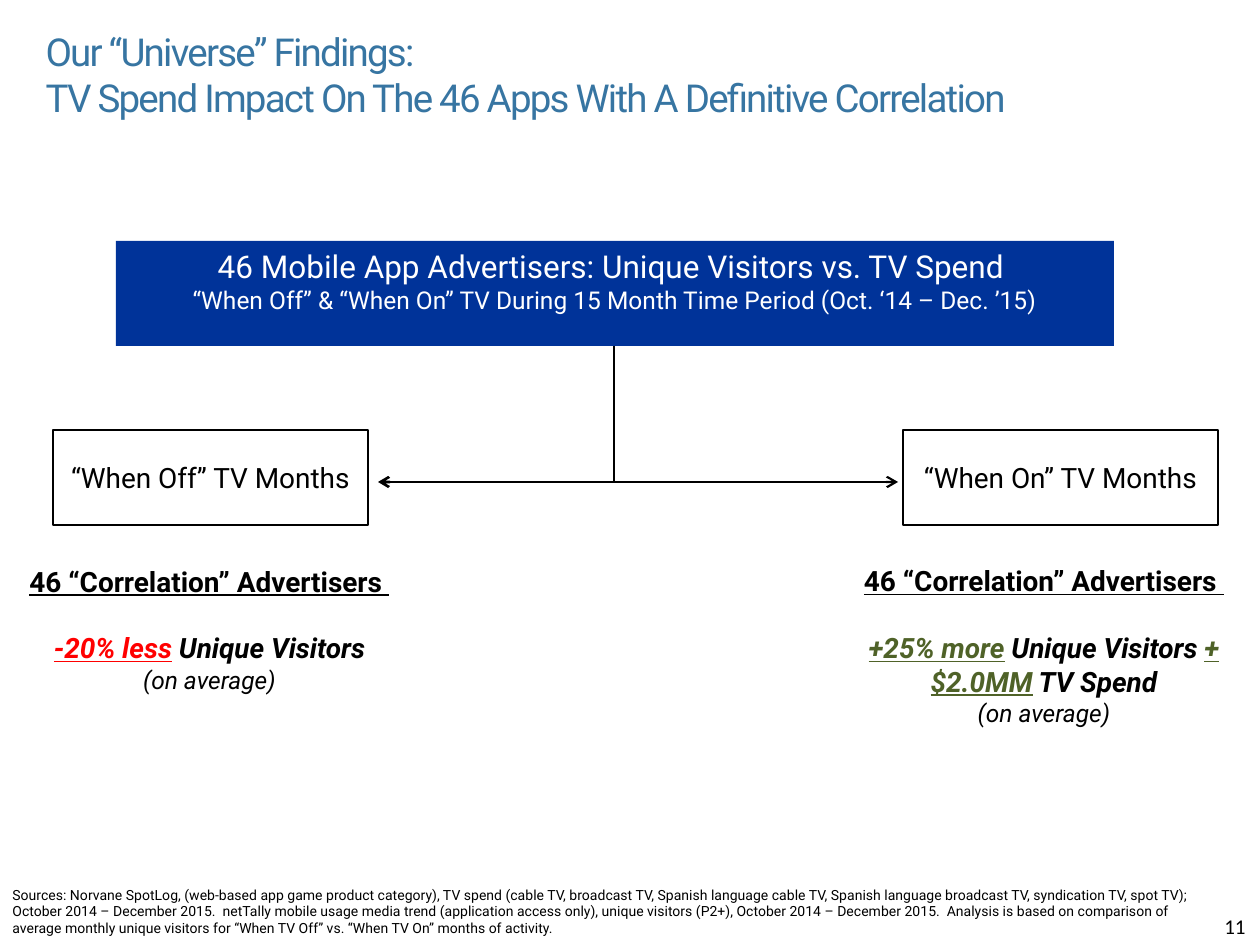
from dataclasses import dataclass

from lxml.etree import SubElement
from pptx import Presentation
from pptx.dml.color import RGBColor
from pptx.enum.shapes import MSO_CONNECTOR as Connector, MSO_SHAPE as Preset
from pptx.enum.text import MSO_ANCHOR as Anchor, MSO_AUTO_SIZE as AutoSize, PP_ALIGN as Align
from pptx.oxml.ns import qn
from pptx.util import Emu, Pt

EMU_PER_PX = 914400 / 126


@dataclass(frozen=True)
class Theme:
    font: str = "Roboto"
    number_font: str = "Calibri"
    title: str = "3775A2"
    banner: str = "003399"
    white: str = "FFFFFF"
    black: str = "000000"
    loss: str = "FF0000"
    gain: str = "4F6228"
    title_size: int = 22
    banner_size: int = 18
    label_size: int = 16
    note_size: int = 14
    number_size: int = 12
    source_size: int = 8


THEME = Theme()


@dataclass(frozen=True)
class Box:
    left: int
    top: int
    width: int
    height: int

    def emu(self) -> list[Emu]:
        return [px(value) for value in (self.left, self.top, self.width, self.height)]


@dataclass(frozen=True)
class Span:
    text: str
    size: int = THEME.label_size
    color: str = THEME.black
    bold: bool = False
    italic: bool = False
    underline: bool = False
    font: str = THEME.font
    spacing: int = 0  # hundredths of a point


@dataclass(frozen=True)
class Line:
    spans: list[Span]
    before: int = 0


@dataclass(frozen=True)
class Branch:
    label: str
    label_box: Box
    result_box: Box
    result: list[Span]


def px(value: float) -> Emu:
    return Emu(round(value * EMU_PER_PX))


def rgb(color: str) -> RGBColor:
    return RGBColor.from_string(color)


def write(frame, lines: list[Line], align=Align.LEFT, anchor=Anchor.TOP, wrap=True) -> None:
    layout = {"word_wrap": wrap, "auto_size": AutoSize.NONE, "vertical_anchor": anchor}
    for name, value in layout.items():
        setattr(frame, name, value)
    for index, line in enumerate(lines):
        para = frame.add_paragraph() if index else frame.paragraphs[0]
        para.alignment = align
        para.space_before = Pt(line.before)
        for span in line.spans:
            run = para.add_run()
            run.text = span.text
            formats = {"name": span.font, "size": Pt(span.size), "bold": span.bold,
                       "italic": span.italic, "underline": span.underline}
            for name, value in formats.items():
                setattr(run.font, name, value)
            run.font.color.rgb = rgb(span.color)
            if span.spacing:
                run.font._element.set("spc", str(span.spacing))


def add_text(slide, box: Box, lines: list[Line], **layout) -> None:
    write(slide.shapes.add_textbox(*box.emu()).text_frame, lines, **layout)


def add_panel(slide, box: Box, fill: str, lines: list[Line], outline: bool, anchor) -> None:
    panel = slide.shapes.add_shape(Preset.RECTANGLE, *box.emu())
    panel.shadow.inherit = False
    panel.fill.solid()
    panel.fill.fore_color.rgb = rgb(fill)
    if outline:
        panel.line.color.rgb = rgb(THEME.black)
        panel.line.width = Pt(0.75)
    else:
        panel.line.fill.background()
    write(panel.text_frame, lines, align=Align.CENTER, anchor=anchor)


def add_arrow(slide, kind, start: tuple[int, int], end: tuple[int, int], width: float):
    arrow = slide.shapes.add_connector(kind, *(px(value) for value in start + end))
    arrow.line.color.rgb = rgb(THEME.black)
    arrow.line.width = Pt(width)
    SubElement(arrow.line._get_or_add_ln(), qn("a:tailEnd"), type="arrow")
    SubElement(arrow._element.spPr, qn("a:effectLst"))
    return arrow


def add_branch(slide, branch: Branch) -> None:
    add_panel(slide, branch.label_box, THEME.white, [Line([Span(branch.label)])],
              outline=True, anchor=Anchor.MIDDLE)
    lines = [
        Line([Span("46 “Correlation” Advertisers ", bold=True, underline=True)]),
        Line(branch.result, before=19),
        Line([Span("(on average)", THEME.note_size, italic=True)]),
    ]
    add_text(slide, branch.result_box, lines, align=Align.CENTER, anchor=Anchor.MIDDLE)


def strong(text: str, color: str = THEME.black, underline: bool = False) -> Span:
    return Span(text, color=color, bold=True, italic=True, underline=underline)


BRANCHES = [
    Branch("“When Off” TV Months", Box(53, 430, 315, 95), Box(15, 564, 389, 130),
           [strong("-20% less", THEME.loss, True), Span(" "), strong("Unique Visitors")]),
    Branch("“When On” TV Months", Box(903, 430, 315, 95), Box(850, 572, 388, 147),
           [strong("+25% more", THEME.gain, True), Span(" "), strong("Unique Visitors "),
            strong("+$2.0MM", THEME.gain, True), strong(" "), strong("TV Spend")]),
]

TITLE = ["Our “Universe” Findings:",
         "TV Spend Impact On The 46 Apps With A Definitive Correlation"]

BANNER = [
    Span("46 Mobile App Advertisers: Unique Visitors vs. TV Spend ",
         THEME.banner_size, THEME.white),
    Span("“When Off” & “When On” TV During 15 Month Time Period (Oct. ‘14 – Dec. ’15)",
         THEME.note_size, THEME.white),
]

SOURCES = (
    "Sources: Norvane SpotLog, (web-based app game product category), TV spend (cable TV, "
    "broadcast TV, Spanish language cable TV, Spanish language broadcast TV, syndication TV, "
    "spot TV); October 2014 – December 2015.  netTally mobile usage media trend (application "
    "access only), unique visitors (P2+), October 2014 – December 2015.  Analysis is based on "
    "comparison of average monthly unique visitors for “When TV Off” vs. “When TV On” months "
    "of activity."
)


def main() -> None:
    deck = Presentation()
    deck.slide_width, deck.slide_height = px(1260), px(945)
    slide = deck.slides.add_slide(deck.slide_layouts[5])

    # Title
    title = slide.shapes.title
    title.left, title.top, title.width, title.height = Box(33, 38, 1032, 72).emu()
    write(title.text_frame,
          [Line([Span(text, THEME.title_size, THEME.title, spacing=-100)]) for text in TITLE],
          anchor=Anchor.MIDDLE)

    # Banner
    add_panel(slide, Box(116, 241, 998, 105), THEME.banner, [Line([span]) for span in BANNER],
              outline=False, anchor=Anchor.TOP)

    # Arrows from the banner: one elbow turned a quarter, one straight
    elbow = add_arrow(slide, Connector.ELBOW, (824, 272), (688, 556), 1.25)
    elbow._element.spPr.find(qn("a:prstGeom")).set("prst", "bentConnector2")
    elbow._element.spPr.find(qn("a:xfrm")).set("rot", str(270 * 60000))
    add_arrow(slide, Connector.STRAIGHT, (620, 482), (378, 482), 1.5)

    # Off and on months with their results
    for branch in BRANCHES:
        add_branch(slide, branch)

    # Sources and page number
    add_text(slide, Box(0, 880, 1218, 63), [Line([Span(SOURCES, THEME.source_size)])])
    add_text(slide, Box(1212, 907, 48, 38),
             [Line([Span("11", THEME.number_size, font=THEME.number_font)])], wrap=False)

    deck.save("out.pptx")


if __name__ == "__main__":
    main()
